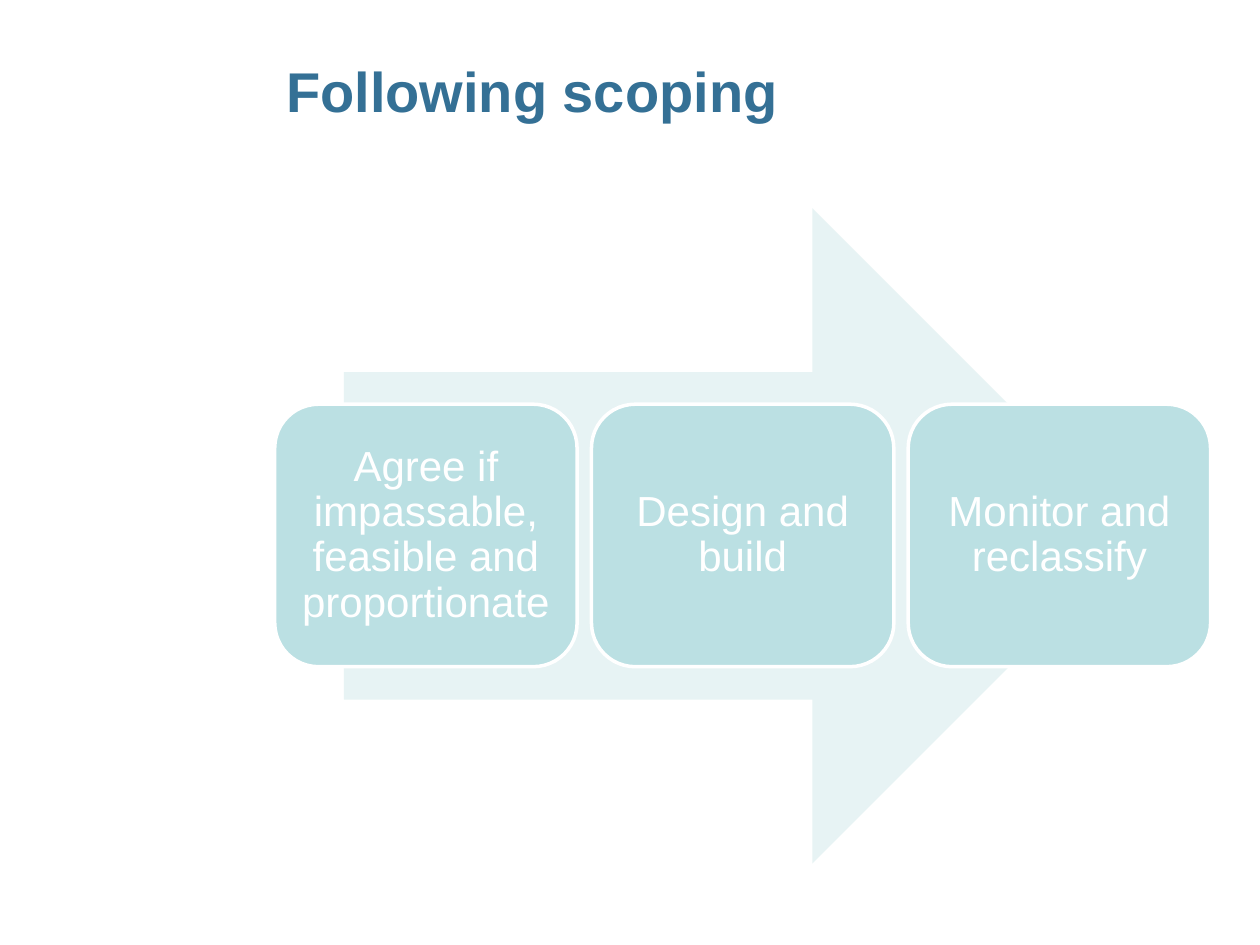
from pptx import Presentation
from pptx.dml.color import RGBColor
from pptx.enum.shapes import MSO_SHAPE
from pptx.enum.text import MSO_ANCHOR, PP_ALIGN
from pptx.util import Pt

COLORS = {"title": "347095", "arrow": "E7F3F4", "step": "BBE0E3", "white": "FFFFFF"}
STEPS = [
    "Agree if impassable, feasible and proportionate",
    "Design and build",
    "Monitor and reclassify",
]


class Deck:
    """Holds the style and the current slide, and draws its elements."""

    font = "Arial"

    def __init__(self, prs):
        self.s = prs.slides.add_slide(prs.slide_layouts[6])

    def color(self, name):
        return RGBColor.from_string(COLORS[name])

    def text(self, sp, text, size, color, bold=False):
        tf = sp.text_frame
        tf.text = text
        tf.word_wrap = True
        p = tf.paragraphs[0]
        r = p.runs[0]
        r.font.name = self.font
        r.font.size = Pt(size)
        r.font.bold = bold
        r.font.color.rgb = self.color(color)
        return tf, p

    def title(self, text, x, y, w, h):
        sp = self.s.shapes.add_textbox(Pt(x), Pt(y), Pt(w), Pt(h))
        self.text(sp, text, 32, "title", bold=True)

    def shape(self, kind, x, y, w, h, fill):
        sp = self.s.shapes.add_shape(kind, Pt(x), Pt(y), Pt(w), Pt(h))
        sp.shadow.inherit = False
        sp.fill.solid()
        sp.fill.fore_color.rgb = self.color(fill)
        sp.line.fill.background()
        return sp

    def arrow(self, x, y, w, h):
        self.shape(MSO_SHAPE.RIGHT_ARROW, x, y, w, h, "arrow")

    def step(self, text, x, y, w, h):
        sp = self.shape(MSO_SHAPE.ROUNDED_RECTANGLE, x, y, w, h, "step")
        sp.line.color.rgb = self.color("white")
        sp.line.width = Pt(2)
        tf, p = self.text(sp, text, 24, "white")
        tf.margin_left = tf.margin_right = tf.margin_top = tf.margin_bottom = Pt(7.2)
        tf.vertical_anchor = MSO_ANCHOR.MIDDLE
        p.alignment = PP_ALIGN.CENTER
        p.line_spacing = 0.9


def main():
    prs = Presentation()
    prs.slide_width, prs.slide_height = Pt(720), Pt(540)
    deck = Deck(prs)
    deck.title("Following scoping", 156.5, 29, 535.5, 76)
    deck.arrow(196.5, 119, 455, 374.5)
    for i, text in enumerate(STEPS):
        deck.step(text, 157 + 181 * i, 231, 172.8, 150)
    prs.save("out.pptx")


if __name__ == "__main__":
    main()
